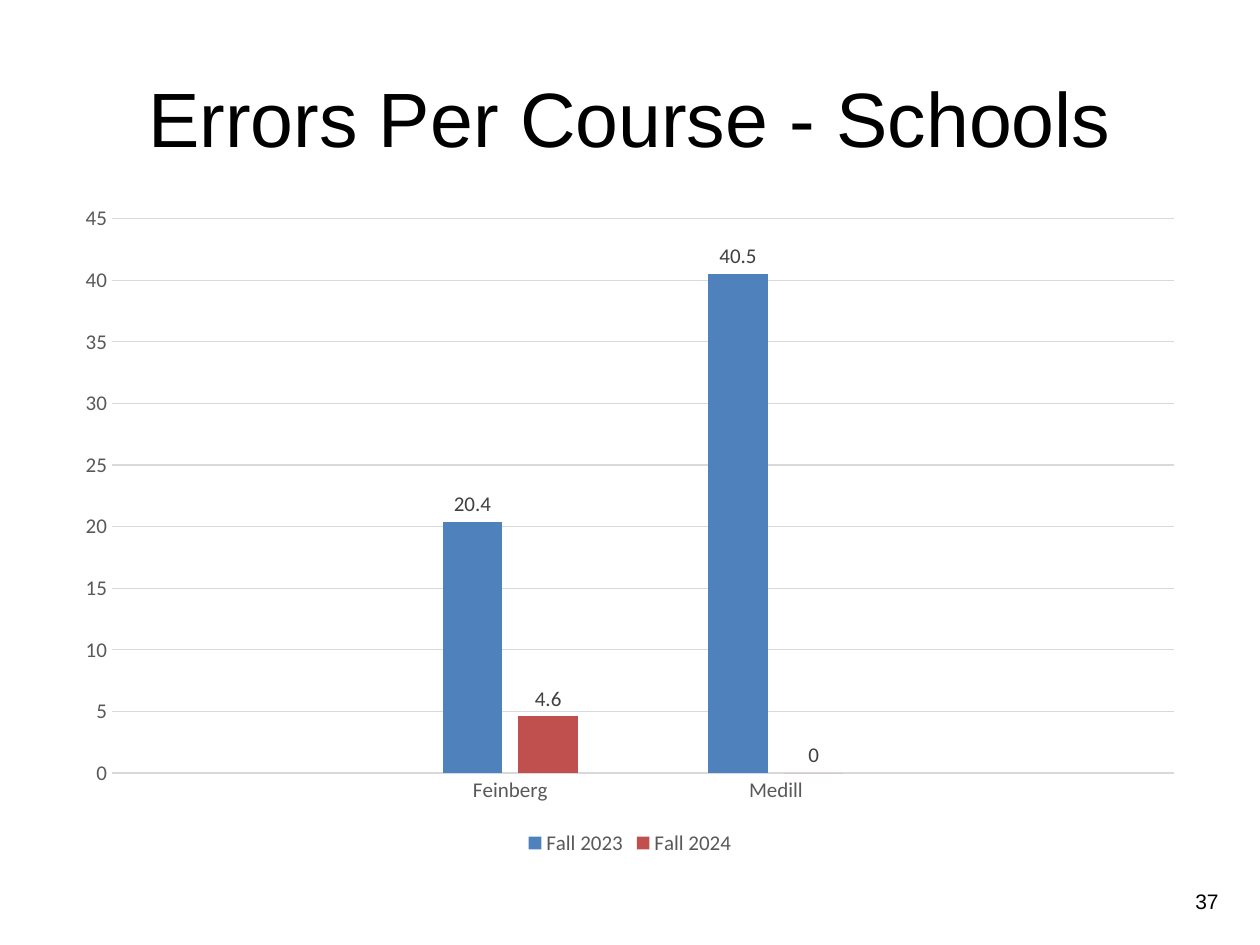
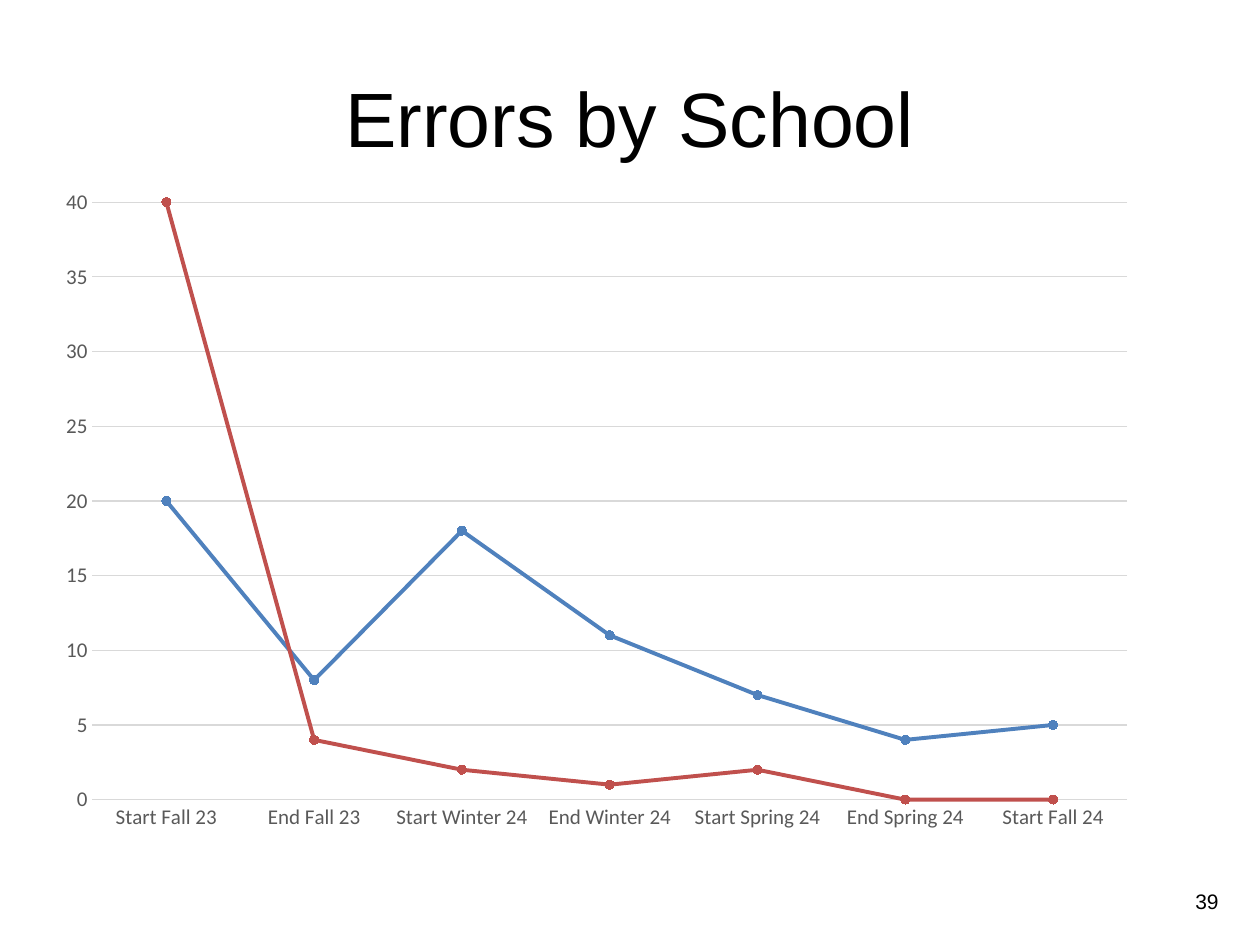
import pptx
import pptx.chart.data
import pptx.dml.color
import pptx.enum.chart
import pptx.enum.text
import pptx.util

Inches = pptx.util.Inches
Pt = pptx.util.Pt
RGBColor = pptx.dml.color.RGBColor
ChartType = pptx.enum.chart.XL_CHART_TYPE

BLACK = RGBColor(0x00, 0x00, 0x00)
LABEL_GRAY = RGBColor(0x40, 0x40, 0x40)
AXIS_GRAY = RGBColor(0x59, 0x59, 0x59)
GRID_GRAY = RGBColor(0xD9, 0xD9, 0xD9)
SERIES_COLORS = [RGBColor(0x4F, 0x81, 0xBD), RGBColor(0xC0, 0x50, 0x4D)]

TEXT_FONT = "Arial"
CHART_FONT = "Calibri"
TITLE_BOX = (0.5, 0.3, 9, 1.25)
NUMBER_BOX = (9.12, 6.95, 0.65, 0.4)
TITLE_ONLY_LAYOUT = 5

SLIDES = [
    {
        "title": "Errors Per Course - Schools",
        "number": "37",
        "type": ChartType.COLUMN_CLUSTERED,
        "box": (0.5, 1.53, 9, 5.3),
        "maximum": 45,
        "categories": ["", "Feinberg", "Medill", ""],
        "series": {
            "Fall 2023": [None, 20.4, 40.5, None],
            "Fall 2024": [None, 4.6, 0, None],
        },
    },
    {
        "title": "Errors by School",
        "number": "39",
        "type": ChartType.LINE_MARKERS,
        "box": (0.35, 1.4, 8.77, 5.29),
        "maximum": 40,
        "categories": ["Start Fall 23", "End Fall 23", "Start Winter 24", "End Winter 24",
                       "Start Spring 24", "End Spring 24", "Start Fall 24"],
        "series": {
            "Series 1": [20, 8, 18, 11, 7, 4, 5],
            "Series 2": [40, 4, 2, 1, 2, 0, 0],
        },
    },
]


def style_font(font, name, size, color):
    font.name = name
    font.size = Pt(size)
    font.color.rgb = color


def style_line(line, color, width):
    line.color.rgb = color
    line.width = Pt(width)


def fill_text(shape, text, size, alignment):
    frame = shape.text_frame
    frame.word_wrap = True
    frame.vertical_anchor = pptx.enum.text.MSO_ANCHOR.MIDDLE
    frame.text = text
    paragraph = frame.paragraphs[0]
    paragraph.alignment = alignment
    style_font(paragraph.font, TEXT_FONT, size, BLACK)


def add_title(slide, text):
    title = slide.shapes.title
    title.left, title.top, title.width, title.height = map(Inches, TITLE_BOX)
    fill_text(title, text, 44, pptx.enum.text.PP_ALIGN.CENTER)


def add_slide_number(slide, number):
    box = slide.shapes.add_textbox(*map(Inches, NUMBER_BOX))
    fill_text(box, number, 12, pptx.enum.text.PP_ALIGN.RIGHT)


def style_axes(chart, maximum):
    for axis in (chart.category_axis, chart.value_axis):
        axis.major_tick_mark = pptx.enum.chart.XL_TICK_MARK.NONE
        axis.minor_tick_mark = pptx.enum.chart.XL_TICK_MARK.NONE
        style_font(axis.tick_labels.font, CHART_FONT, 12, AXIS_GRAY)
    style_line(chart.category_axis.format.line, GRID_GRAY, 0.75)
    value_axis = chart.value_axis
    value_axis.format.line.fill.background()
    value_axis.minimum_scale = 0
    value_axis.maximum_scale = maximum
    value_axis.major_unit = 5
    style_line(value_axis.major_gridlines.format.line, GRID_GRAY, 0.75)


def style_columns(chart):
    plot = chart.plots[0]
    plot.gap_width = 219
    plot.overlap = -27
    plot.vary_by_categories = False
    for series, color in zip(plot.series, SERIES_COLORS):
        series.format.fill.solid()
        series.format.fill.fore_color.rgb = color
        labels = series.data_labels
        labels.show_value = True
        labels.position = pptx.enum.chart.XL_LABEL_POSITION.OUTSIDE_END
        style_font(labels.font, CHART_FONT, 12, LABEL_GRAY)
    chart.has_legend = True
    chart.legend.position = pptx.enum.chart.XL_LEGEND_POSITION.BOTTOM
    chart.legend.include_in_layout = False
    style_font(chart.legend.font, CHART_FONT, 12, AXIS_GRAY)


def style_lines(chart):
    plot = chart.plots[0]
    plot.vary_by_categories = False
    for series, color in zip(plot.series, SERIES_COLORS):
        series.smooth = False
        style_line(series.format.line, color, 2.25)
        marker = series.marker
        marker.style = pptx.enum.chart.XL_MARKER_STYLE.CIRCLE
        marker.size = 5
        marker.format.fill.solid()
        marker.format.fill.fore_color.rgb = color
        style_line(marker.format.line, color, 0.75)
    chart.has_legend = False


def add_error_chart(slide, content):
    data = pptx.chart.data.CategoryChartData()
    data.categories = content["categories"]
    for name, values in content["series"].items():
        data.add_series(name, values)
    frame = slide.shapes.add_chart(content["type"], *map(Inches, content["box"]), data)
    chart = frame.chart
    chart.has_title = False
    style_font(chart.font, CHART_FONT, 10, BLACK)
    style_axes(chart, content["maximum"])
    if content["type"] == ChartType.COLUMN_CLUSTERED:
        style_columns(chart)
    else:
        style_lines(chart)


def main():
    presentation = pptx.Presentation()
    presentation.slide_width = Inches(10)
    presentation.slide_height = Inches(7.5)
    for content in SLIDES:
        slide = presentation.slides.add_slide(presentation.slide_layouts[TITLE_ONLY_LAYOUT])
        add_title(slide, content["title"])
        add_slide_number(slide, content["number"])
        add_error_chart(slide, content)
    presentation.save("out.pptx")


if __name__ == "__main__":
    main()
